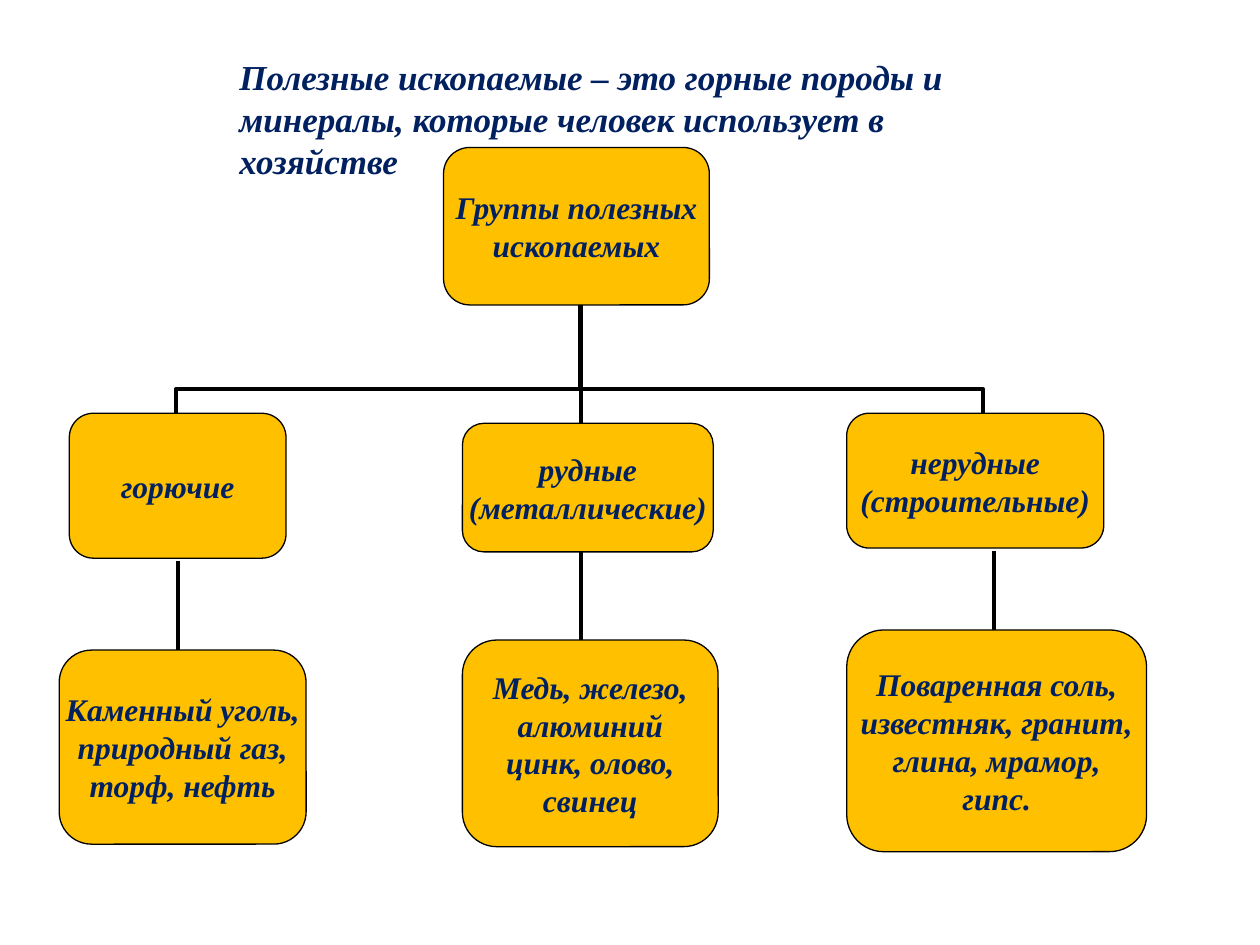
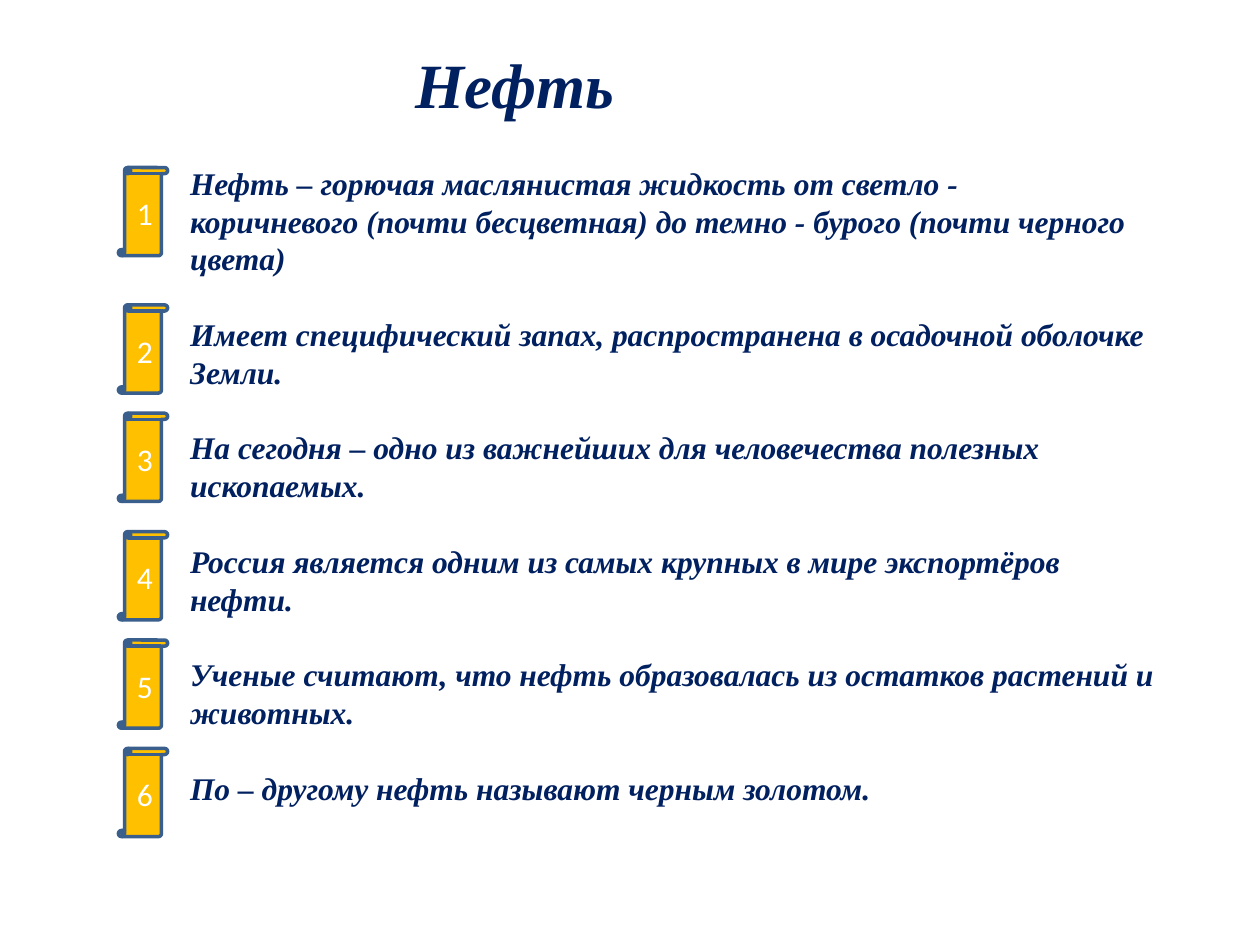
from lxml import etree
from pptx import Presentation, util as u
from pptx.dml.color import RGBColor
from pptx.enum import shapes, text
from pptx.oxml.ns import qn

NAVY, GOLD, BLACK, WHITE, STEEL = "002060", "FFC000", "000000", "FFFFFF", "3A5F8C"
SERIF, SANS = "Times New Roman", "Calibri"
inch = u.Inches


def write(shape, words, size, align, color=NAVY, font=SERIF, strong=True, gap=0):
    """Fill a shape with paragraphs, one per line of words, gap points apart."""
    frame = shape.text_frame
    frame.text = words
    for i, para in enumerate(frame.paragraphs):
        para.alignment = align
        para.space_before = u.Pt(gap if i else 0)
        for run in para.runs:
            run.font.size, run.font.name = u.Pt(size), font
            run.font.bold = run.font.italic = strong
            run.font.color.rgb = RGBColor.from_string(color)


def paint(shape, edge, width, fill=None):
    """Set line and fill, and take away the theme shadow."""
    shape.line.color.rgb = RGBColor.from_string(edge)
    shape.line.width = u.Pt(width)
    if fill:
        shape.shadow.inherit = False
        shape.fill.solid()
        shape.fill.fore_color.rgb = RGBColor.from_string(fill)
    else:
        etree.SubElement(shape._element.spPr, qn("a:effectLst"))


deck = Presentation()
deck.slide_width, deck.slide_height = inch(10), inch(7.5)
LEFT, MID = text.PP_ALIGN.LEFT, text.PP_ALIGN.CENTER

# Both slides and their titles
heads = [
    ("Полезные ископаемые – это горные породы и минералы, которые человек использует в хозяйстве",
     20, (1.8, 0.39, 6.41, 1.11)),
    ("Нефть", 36, (3.2, 0.31, 4.84, 0.71)),
]
for words, size, area in heads:
    slide = deck.slides.add_slide(deck.slide_layouts[5])
    title = slide.shapes.title
    title.left, title.top, title.width, title.height = map(inch, area)
    title.text_frame.auto_size = text.MSO_AUTO_SIZE.NONE
    title.text_frame.vertical_anchor = text.MSO_ANCHOR.TOP
    write(title, words, size, LEFT)
tree, oil = deck.slides

# Slide 1: elbows from the root to the outer groups
ROOT, FORK, DROP, SPAN = 4.6, 2.42, 0.89, 3.2
for side, turn in [(-1, 270), (1, 90)]:
    x, y = ROOT + side * SPAN / 2, FORK + DROP / 2
    elbow = tree.shapes.add_connector(
        shapes.MSO_CONNECTOR.ELBOW,
        inch(x + side * DROP / 2), inch(y - SPAN / 2),
        inch(x - side * DROP / 2), inch(y + SPAN / 2))
    props = elbow._element.spPr
    props.find(qn("a:xfrm")).set("rot", str(turn * 60000))
    guides = props.find(qn("a:prstGeom")).get_or_add_avLst()
    etree.SubElement(guides, qn("a:gd"), name="adj1", fmla="val 25400")
    paint(elbow, BLACK, 2.25)

# Straight links: x, top, bottom
links = [(4.61, 2.42, 3.39), (1.41, 4.45, 5.16), (4.61, 4.37, 5.08), (7.89, 4.37, 5)]
for x, top, end in links:
    link = tree.shapes.add_connector(
        shapes.MSO_CONNECTOR.STRAIGHT, inch(x), inch(top), inch(x), inch(end))
    paint(link, BLACK, 2.25)

boxes = [
    ("Группы полезных\nископаемых", 3.52, 1.17, 2.11, 1.25),
    ("горючие", 0.55, 3.28, 1.72, 1.15),
    ("рудные\n(металлические)", 3.67, 3.36, 1.99, 1.02),
    ("нерудные\n(строительные)", 6.72, 3.28, 2.04, 1.07),
    ("Каменный уголь,\nприродный газ,\nторф, нефть", 0.47, 5.16, 1.96, 1.54),
    ("Медь, железо,\nалюминий\nцинк, олово,\nсвинец", 3.67, 5.08, 2.03, 1.64),
    ("Поваренная соль,\nизвестняк, гранит,\nглина, мрамор,\nгипс.", 6.72, 5, 2.38, 1.76),
]
for words, *area in boxes:
    box = tree.shapes.add_shape(shapes.MSO_SHAPE.ROUNDED_RECTANGLE, *map(inch, area))
    paint(box, BLACK, 0.75, GOLD)
    frame = box.text_frame
    frame.margin_left = frame.margin_right = frame.margin_top = frame.margin_bottom = 0
    frame.word_wrap = False
    frame.vertical_anchor = text.MSO_ANCHOR.MIDDLE
    write(box, words, 18, MID)

# Slide 2: facts, one empty line's height apart
facts = [
    "Нефть – горючая маслянистая жидкость от светло -\v"
    "коричневого (почти бесцветная) до темно - бурого (почти черного цвета)",
    "Имеет специфический запах, распространена в осадочной оболочке Земли.",
    "На сегодня – одно из важнейших для человечества полезных ископаемых.",
    "Россия является одним из самых крупных в мире экспортёров нефти.",
    "Ученые считают, что нефть образовалась из остатков растений и животных.",
    "По – другому нефть называют черным золотом.",
]
body = oil.shapes.add_textbox(*map(inch, (1.41, 1.25, 7.89, 5.25)))
body.text_frame.word_wrap = True
write(body, "\n".join(facts), 18, LEFT, gap=18 * 1.2)

for num, top in enumerate([1.33, 2.42, 3.28, 4.22, 5.08, 5.94], 1):
    scroll = oil.shapes.add_shape(
        shapes.MSO_SHAPE.VERTICAL_SCROLL, *map(inch, (0.94, top, 0.39, 0.7)))
    paint(scroll, STEEL, 2, GOLD)
    scroll.text_frame.vertical_anchor = text.MSO_ANCHOR.MIDDLE
    write(scroll, str(num), 18, MID, WHITE, SANS, False)

deck.save("out.pptx")
